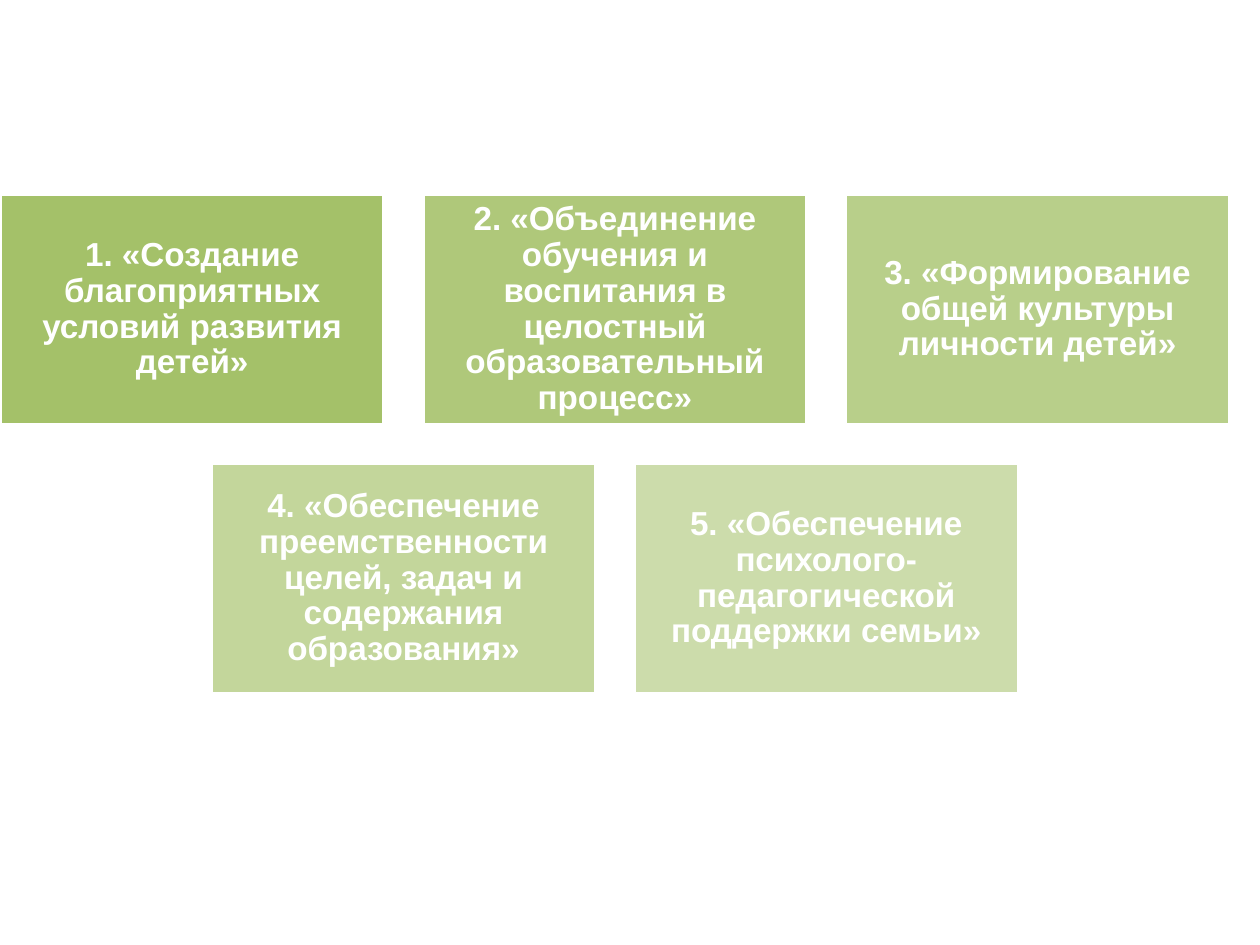
from pptx import Presentation
from pptx.dml.color import RGBColor
from pptx.enum.shapes import MSO_SHAPE
from pptx.enum.text import MSO_ANCHOR, PP_ALIGN
from pptx.oxml.ns import qn
from pptx.util import Inches, Pt
from lxml import etree

RECTANGLE = MSO_SHAPE.RECTANGLE
MIDDLE = MSO_ANCHOR.MIDDLE
CENTER = PP_ALIGN.CENTER

GREEN = RGBColor(0x9B, 0xBB, 0x59)
WHITE = RGBColor(0xFF, 0xFF, 0xFF)

GOALS = [
    "1. «Создание благоприятных условий развития детей»",
    "2. «Объединение обучения и воспитания в целостный образовательный процесс»",
    "3. «Формирование общей культуры личности детей»",
    "4. «Обеспечение преемственности целей, задач и содержания образования»",
    "5. «Обеспечение психолого-педагогической поддержки семьи»",
]
COLUMNS = 3
CARD_WIDTH = 3.05
CARD_HEIGHT = 1.83
GAP = CARD_WIDTH / 10


def set_opacity(shape, percent):
    color = shape.fill._xPr.find(qn("a:solidFill"))[0]
    etree.SubElement(color, qn("a:alpha"), val=str(percent * 1000))


def add_card(shapes, left, top, text, opacity):
    card = shapes.add_shape(RECTANGLE, Inches(left), Inches(top),
                            Inches(CARD_WIDTH), Inches(CARD_HEIGHT))
    card.shadow.inherit = False
    card.fill.solid()
    card.fill.fore_color.rgb = GREEN
    set_opacity(card, opacity)
    card.line.color.rgb = WHITE
    card.line.width = Pt(2)

    frame = card.text_frame
    frame.word_wrap = True
    frame.vertical_anchor = MIDDLE
    frame.margin_left = frame.margin_right = Inches(0.08)
    frame.margin_top = frame.margin_bottom = Inches(0.08)
    paragraph = frame.paragraphs[0]
    paragraph.alignment = CENTER
    paragraph.line_spacing = 0.9
    run = paragraph.add_run()
    run.text = text
    run.font.name = "Arial"
    run.font.size = Pt(19)
    run.font.bold = True
    run.font.color.rgb = WHITE


def add_goal_cards(slide, left, top, width):
    """Lay the goals out in centred rows, each card paler than the one before."""
    shapes = slide.shapes.add_group_shape().shapes
    for index, goal in enumerate(GOALS):
        row, column = divmod(index, COLUMNS)
        row_count = min(COLUMNS, len(GOALS) - row * COLUMNS)
        row_width = row_count * (CARD_WIDTH + GAP) - GAP
        card_left = left + (width - row_width) / 2 + column * (CARD_WIDTH + GAP)
        card_top = top + row * (CARD_HEIGHT + GAP)
        add_card(shapes, card_left, card_top, goal, 90 - 10 * index)


def main():
    presentation = Presentation()
    presentation.slide_width = Inches(10)
    presentation.slide_height = Inches(7.5)
    slide = presentation.slides.add_slide(presentation.slide_layouts[6])
    add_goal_cards(slide, left=0, top=1.54, width=9.76)
    presentation.save("out.pptx")


if __name__ == "__main__":
    main()
